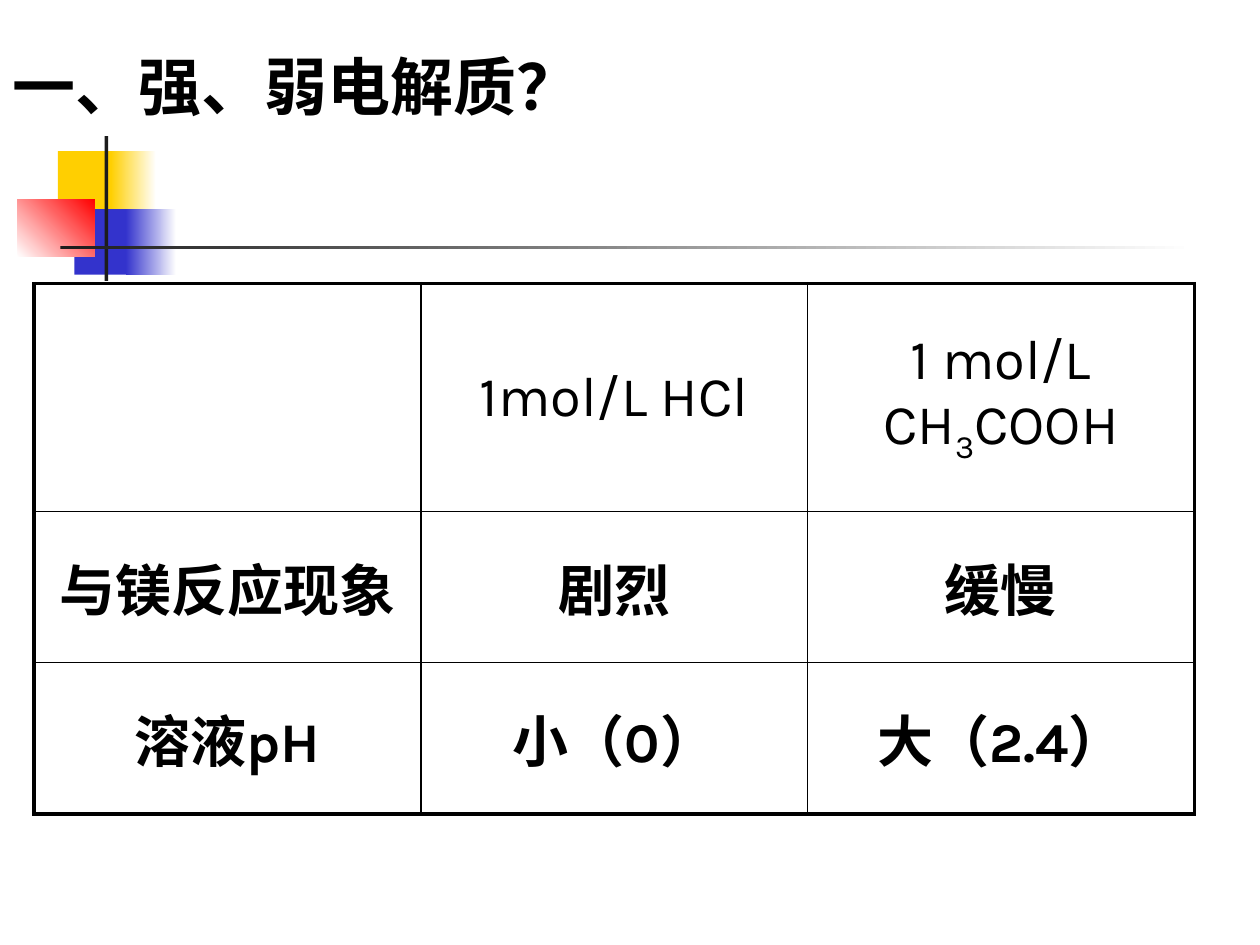
from lxml import etree
from pptx import Presentation
from pptx.dml.color import RGBColor
from pptx.enum.shapes import MSO_SHAPE
from pptx.enum.text import MSO_ANCHOR, PP_ALIGN
from pptx.oxml.ns import qn
from pptx.util import Inches, Pt

BLACK = RGBColor(0x00, 0x00, 0x00)
WHITE = RGBColor(0xFF, 0xFF, 0xFF)
CHARCOAL = RGBColor(0x1C, 0x1C, 0x1C)
YELLOW = RGBColor(0xFF, 0xCF, 0x01)
BLUE = RGBColor(0x33, 0x33, 0xCC)
RED = RGBColor(0xFF, 0x00, 0x00)

THIN, THICK = Pt(1), Pt(2.25)

# Each cell is a list of (text, baseline) runs.
COMPARISON = [
    [[], [("1mol/L HCl", 0)], [("1 mol/L CH", 0), ("3", -25000), ("COOH", 0)]],
    [[("与镁反应现象", 0)], [("剧烈", 0)], [("缓慢", 0)]],
    [[("溶液pH", 0)], [("小（0）", 0)], [("大（2.4）", 0)]],
]


def add_block(slide, box, start, end=None, angle=0):
    """Add a borderless rectangle, shaded from start to end if end is given."""
    block = slide.shapes.add_shape(MSO_SHAPE.RECTANGLE, *map(Inches, box))
    block.shadow.inherit = False
    block.line.fill.background()
    if end is None:
        block.fill.solid()
        block.fill.fore_color.rgb = start
        return
    block.fill.gradient()
    block.fill.gradient_angle = angle
    for stop, color in zip(block.fill.gradient_stops, (start, end)):
        stop.color.rgb = color


def add_ornament(slide, left, top):
    add_block(slide, (left + 0.32, top + 0.12, 0.48, 0.52), YELLOW)
    add_block(slide, (left + 0.74, top + 0.12, 0.36, 0.52), YELLOW, WHITE)
    add_block(slide, (left + 0.45, top + 0.58, 0.46, 0.52), BLUE)
    add_block(slide, (left + 0.86, top + 0.58, 0.4, 0.52), BLUE, WHITE)
    add_block(slide, (left, top + 0.5, 0.61, 0.46), WHITE, RED, angle=45)
    add_block(slide, (left + 0.69, top, 0.03, 1.15), CHARCOAL)
    add_block(slide, (left + 0.34, top + 0.87, 9, 0.03), CHARCOAL, WHITE)


def add_title(slide, left, top, width, height):
    title = slide.shapes.add_textbox(
        Inches(left), Inches(top), Inches(width), Inches(height))
    title.text_frame.word_wrap = True
    paragraph = title.text_frame.paragraphs[0]
    paragraph.text = "一、强、弱电解质？"
    paragraph.alignment = PP_ALIGN.JUSTIFY
    font = paragraph.runs[0].font
    font.name = "Times New Roman"
    font.size = Pt(36)
    font.bold = True
    font.color.rgb = BLACK


def set_border(cell, side, width):
    line = etree.SubElement(
        cell._tc.get_or_add_tcPr(), qn(f"a:ln{side}"), w=str(width))
    fill = etree.SubElement(line, qn("a:solidFill"))
    etree.SubElement(fill, qn("a:srgbClr"), val=str(BLACK))


def write_cell(cell, parts, bold):
    cell.vertical_anchor = MSO_ANCHOR.MIDDLE
    paragraph = cell.text_frame.paragraphs[0]
    paragraph.alignment = PP_ALIGN.CENTER
    paragraph.space_before = Pt(6.4)
    for text, baseline in parts:
        run = paragraph.add_run()
        run.text = text
        run.font.name = "Karla"
        run.font.size = Pt(32)
        run.font.bold = bold
        run.font.color.rgb = BLACK
        if baseline:
            run.font._element.set("baseline", str(baseline))


def add_comparison(slide, left, top, width, row_heights):
    last_row, last_column = len(COMPARISON) - 1, len(COMPARISON[0]) - 1
    table = slide.shapes.add_table(
        last_row + 1, last_column + 1, Inches(left), Inches(top),
        Inches(width), Inches(sum(row_heights))).table
    table.first_row = table.horz_banding = False
    for row, height in zip(table.rows, row_heights):
        row.height = Inches(height)
    for r, row in enumerate(COMPARISON):
        for c, parts in enumerate(row):
            cell = table.cell(r, c)
            write_cell(cell, parts, bold=r > 0)
            outer = {"L": c == 0, "R": c == last_column,
                     "T": r == 0, "B": r == last_row}
            for side, is_outer in outer.items():
                set_border(cell, side, THICK if is_outer else THIN)
            cell.fill.background()


def main():
    presentation = Presentation()
    presentation.slide_width = Inches(10)
    presentation.slide_height = Inches(7.5)
    slide = presentation.slides.add_slide(presentation.slide_layouts[6])
    add_ornament(slide, 0.14, 1.08)
    add_title(slide, 0, 0.33, 10, 1.3)
    add_comparison(slide, 0.27, 2.25, 9.21, (1.81, 1.2, 1.2))
    presentation.save("out.pptx")


if __name__ == "__main__":
    main()
